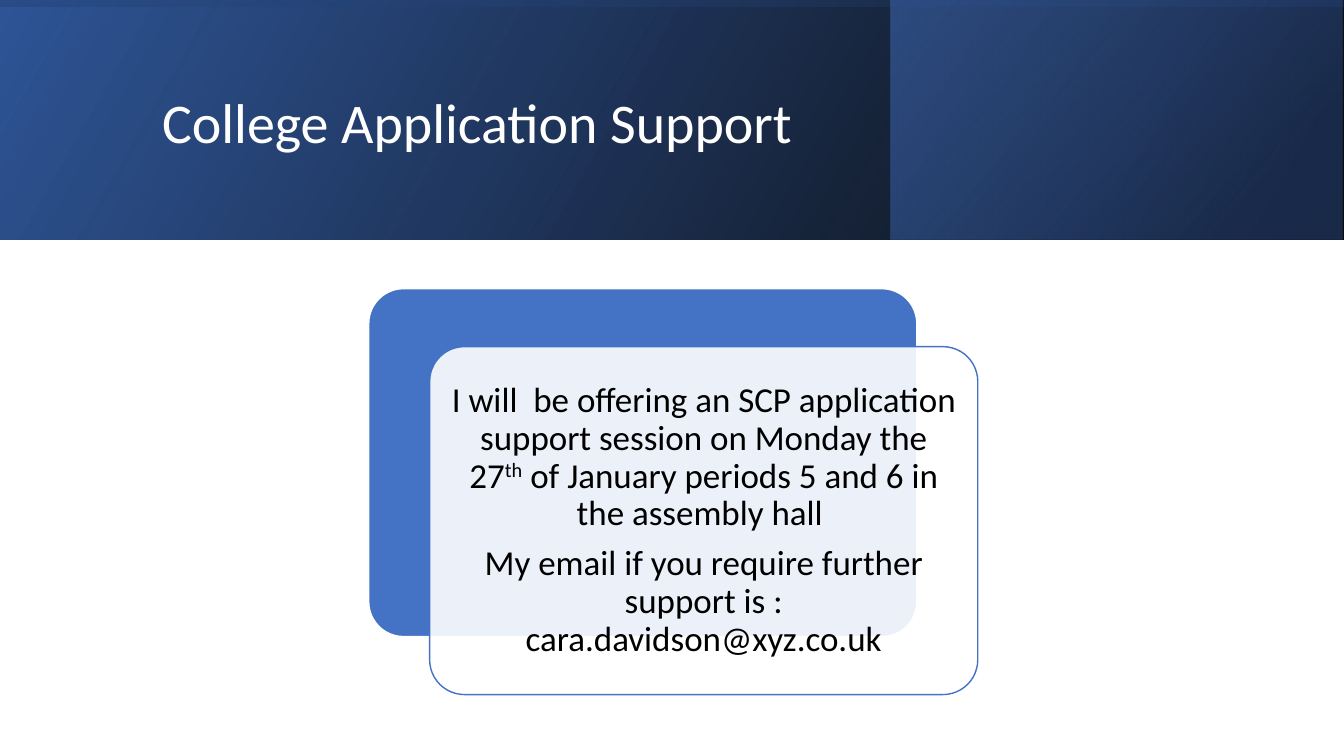
import pptx
import pptx.dml.color
import pptx.enum.shapes
import pptx.enum.text
import pptx.oxml
import pptx.oxml.ns
import pptx.util

Pt = pptx.util.Pt
RGBColor = pptx.dml.color.RGBColor
SHAPE = pptx.enum.shapes.MSO_SHAPE
ALIGN = pptx.enum.text.PP_ALIGN
MIDDLE = pptx.enum.text.MSO_ANCHOR.MIDDLE

BLACK = RGBColor(0x00, 0x00, 0x00)
WHITE = RGBColor(0xFF, 0xFF, 0xFF)
BLUE = RGBColor(0x44, 0x72, 0xC4)
DEEP_BLUE = RGBColor(0x2F, 0x55, 0x97)
NAVY = RGBColor(0x20, 0x38, 0x64)

TITLE = [[("College Application Support", False)]]
SESSION = [
    [
        ("I will  be offering an SCP application support session on Monday the 27", False),
        ("th", True),
        (" of January periods 5 and 6 in the assembly hall ", False),
    ],
    [("My email if you require further support is : cara.davidson@xyz.co.uk", False)],
]

SLIDE_W, SLIDE_H = 960, 540
BAND_H = 171
PANEL_X = 636.3
PANEL_W = 322.8
UPRIGHT_X = (SLIDE_W - BAND_H) / 2
UPRIGHT_Y = (BAND_H - SLIDE_W) / 2

BANDS = [
    ((0, 0, SLIDE_W, BAND_H), 0, 330, [(0, BLACK, 96), (1, DEEP_BLUE, 100)]),
    ((PANEL_X, 0, PANEL_W, BAND_H), 0, 320, [(0.19, NAVY, 68), (1, BLUE, 48)]),
    ((UPRIGHT_X, UPRIGHT_Y, BAND_H, SLIDE_W), 270, 350,
     [(0.23, DEEP_BLUE, 16), (0.99, BLACK, 45)]),
]

CARD_X, CARD_Y, CARD_W, CARD_H = 263.4, 206.2, 391.5, 248.5
CARD_STEP_X, CARD_STEP_Y = 43.5, 41.4
CARDS = [(BLUE, 100, WHITE), (WHITE, 90, BLUE)]
INSET = 7.3
MARGIN = 7.5

TITLE_FORMAT = {"size": Pt(40), "name": "Calibri"}
SESSION_FORMAT = {"size": Pt(25), "name": "Calibri"}
TITLE_SPACING = {"line_spacing": 0.9}
SESSION_SPACING = {"line_spacing": 0.9, "space_after": Pt(8.75), "alignment": ALIGN.CENTER}


def apply(target, values):
    for key, value in values.items():
        setattr(target, key, value)


def set_opacity(colour_holder, percent):
    if percent < 100:
        colour = colour_holder.find(".//" + pptx.oxml.ns.qn("a:srgbClr"))
        alpha = pptx.oxml.parse_xml(
            f'<a:alpha {pptx.oxml.ns.nsdecls("a")} val="{percent * 1000}"/>')
        colour.append(alpha)


def add_shape(slide, preset, box):
    shape = slide.shapes.add_shape(preset, *map(Pt, box))
    shape.shadow.inherit = False
    return shape


def add_band(slide, box, rotation, angle, stops):
    band = add_shape(slide, SHAPE.RECTANGLE, box)
    band.line.fill.background()
    band.rotation = rotation
    band._element.spPr.xfrm.set("flipH", "1")
    band.fill.gradient()
    band.fill.gradient_angle = 360 - angle
    for stop, (position, colour, opacity) in zip(band.fill.gradient_stops, stops):
        stop.position = position
        stop.color.rgb = colour
        set_opacity(stop._gs, opacity)


def add_card(slide, box, colour, opacity, outline):
    card = add_shape(slide, SHAPE.ROUNDED_RECTANGLE, box)
    card.adjustments[0] = 0.1
    card.fill.solid()
    card.fill.fore_color.rgb = colour
    set_opacity(card._element.spPr.find(pptx.oxml.ns.qn("a:solidFill")), opacity)
    card.line.color.rgb = outline
    card.line.width = Pt(1)


def add_text(slide, box, paragraphs, spacing, font_format, colour, frame_format):
    frame = slide.shapes.add_textbox(*map(Pt, box)).text_frame
    apply(frame, {"word_wrap": True, "vertical_anchor": MIDDLE, **frame_format})
    for index, runs in enumerate(paragraphs):
        paragraph = frame.add_paragraph() if index else frame.paragraphs[0]
        apply(paragraph, spacing)
        for words, raised in runs:
            run = paragraph.add_run()
            run.text = words
            apply(run.font, font_format)
            run.font.color.rgb = colour
            if raised:
                run.font._element.set("baseline", "30000")


def main():
    deck = pptx.Presentation()
    apply(deck, {"slide_width": Pt(SLIDE_W), "slide_height": Pt(SLIDE_H)})
    slide = deck.slides.add_slide(deck.slide_layouts[6])

    for band in BANDS:
        add_band(slide, *band)
    add_text(slide, (108.7, 27.4, 765.4, 123.8), TITLE, TITLE_SPACING,
             TITLE_FORMAT, WHITE, {})

    for index, card in enumerate(CARDS):
        left = CARD_X + index * CARD_STEP_X
        top = CARD_Y + index * CARD_STEP_Y
        add_card(slide, (left, top, CARD_W, CARD_H), *card)

    margins = {f"margin_{side}": Pt(MARGIN) for side in ("left", "top", "right", "bottom")}
    inner = (left + INSET, top + INSET, CARD_W - 2 * INSET, CARD_H - 2 * INSET)
    add_text(slide, inner, SESSION, SESSION_SPACING, SESSION_FORMAT, BLACK, margins)

    deck.save("out.pptx")


if __name__ == "__main__":
    main()
